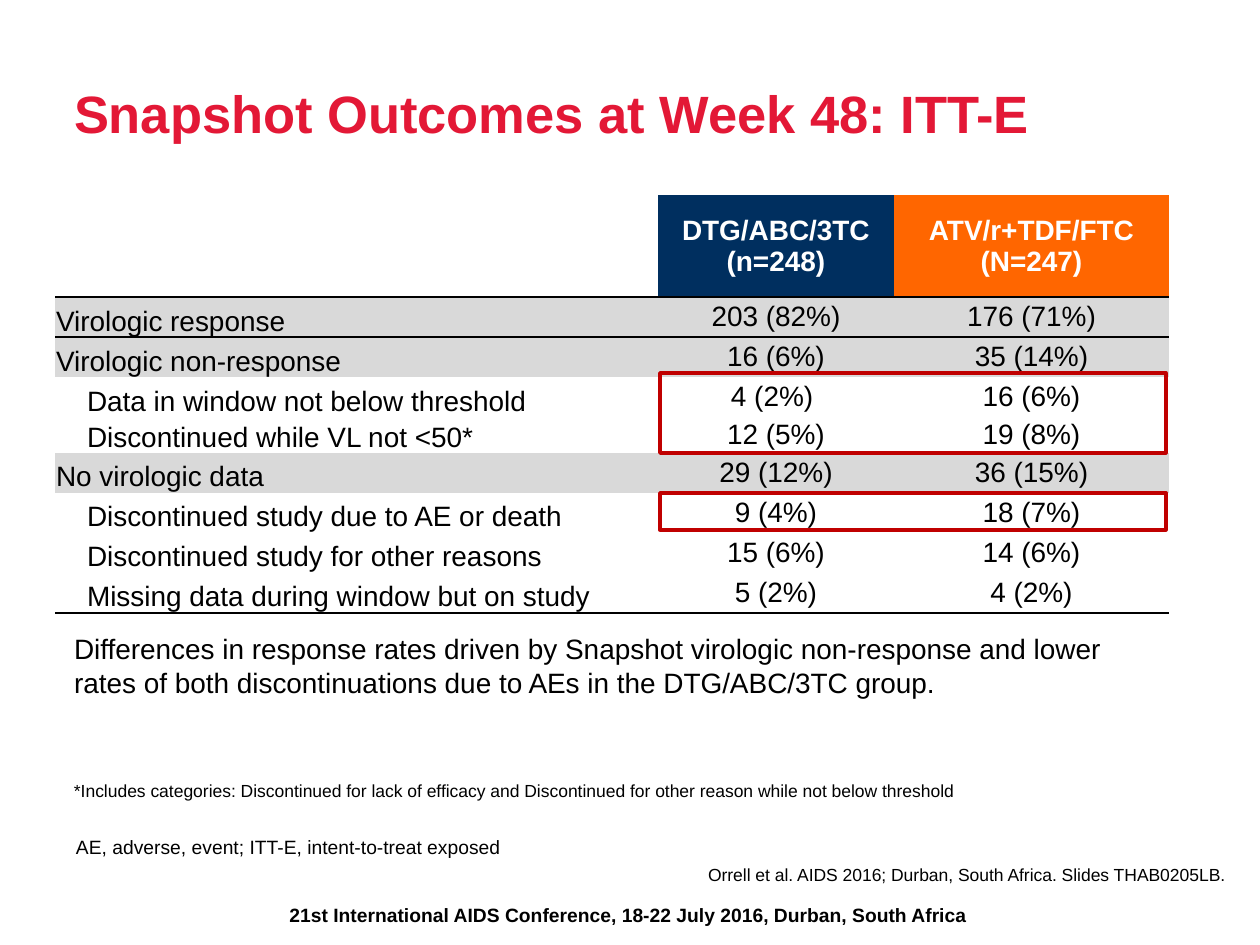
from dataclasses import dataclass

from lxml.etree import SubElement
from pptx import Presentation
from pptx.dml.color import RGBColor
from pptx.enum.shapes import MSO_SHAPE
from pptx.enum.text import MSO_ANCHOR, PP_ALIGN
from pptx.oxml.ns import qn
from pptx.util import Pt

SCALE = 914400 / 126
HUES = {
    "red": "E31836", "navy": "002F5F", "orange": "FF6600", "grey": "D9D9D9",
    "frame": "C00000", "black": "000000", "white": "FFFFFF",
}
FACE = "Arial"


@dataclass
class Box:
    x: int
    y: int
    w: int
    h: int


@dataclass
class Note:
    box: Box
    text: str
    size: int
    hue: str = "black"
    bold: bool = False
    align: PP_ALIGN = PP_ALIGN.LEFT
    anchor: MSO_ANCHOR = MSO_ANCHOR.TOP
    inset: tuple[int, int] = (0, 0)
    after: int = 0
    lead: int = 0


@dataclass
class Row:
    label: str
    left: str
    right: str
    sub: bool = False
    high: int = 40
    rule: bool = False


NOTES = [
    Note(Box(8, 897, 1241, 36),
         "21st International AIDS Conference, 18-22 July 2016, Durban, South Africa",
         11, bold=True, align=PP_ALIGN.CENTER, inset=(13, 6)),
    Note(Box(74, 76, 1155, 68), "Snapshot Outcomes at Week 48: ITT-E", 30,
         hue="red", bold=True, anchor=MSO_ANCHOR.BOTTOM, lead=35),
    Note(Box(74, 632, 1091, 152),
         "Differences in response rates driven by Snapshot virologic non-response "
         "and lower rates of both discontinuations due to AEs in the DTG/ABC/3TC group.",
         16, after=3),
    Note(Box(63, 829, 1152, 25), "AE, adverse, event; ITT-E, intent-to-treat exposed",
         11, inset=(13, 6), after=3),
    Note(Box(73, 864, 1152, 25),
         "Orrell et al. AIDS 2016; Durban, South Africa. Slides THAB0205LB.",
         10, align=PP_ALIGN.RIGHT, after=3),
    Note(Box(74, 780, 893, 63),
         "*Includes categories: Discontinued for lack of efficacy and "
         "Discontinued for other reason while not below threshold", 10),
]
HEADS = [("DTG/ABC/3TC\n(n=248)", "navy"), ("ATV/r+TDF/FTC\n(N=247)", "orange")]
TOP = 102
ROWS = [
    Row("Virologic response", "203 (82%)", "176 (71%)", rule=True),
    Row("Virologic non-response", "16 (6%)", "35 (14%)"),
    Row("Data in window not below threshold", "4 (2%) ", "16 (6%)", sub=True),
    Row("Discontinued while VL not <50*", "12 (5%)", "19 (8%)", sub=True, high=36),
    Row("No virologic data", "29 (12%)", "36 (15%)"),
    Row("Discontinued study due to AE or death", "9 (4%)", "18 (7%)", sub=True),
    Row("Discontinued study for other reasons", "15 (6%)", "14 (6%)", sub=True),
    Row("Missing data during window but on study", "5 (2%)", "4 (2%)",
        sub=True, rule=True),
]
COLS = [603, 236, 275]
GRID = Box(55, 195, sum(COLS), TOP + sum(row.high for row in ROWS))
FRAMES = [Box(660, 493, 506, 37), Box(660, 373, 506, 80)]


def px(n: int) -> int:
    return round(n * SCALE)


def spot(box: Box) -> list[int]:
    return [px(n) for n in (box.x, box.y, box.w, box.h)]


def tint(name: str) -> RGBColor:
    return RGBColor.from_string(HUES[name])


def put_run(para, text: str, size: int, hue: str, bold: bool) -> None:
    run = para.add_run()
    run.text = text
    font = run.font
    font.name, font.size, font.bold = FACE, Pt(size), bold
    font.color.rgb = tint(hue)


def draw_note(slide, note: Note) -> None:
    frame = slide.shapes.add_textbox(*spot(note.box)).text_frame
    frame.word_wrap = True
    frame.vertical_anchor = note.anchor
    frame.margin_left = frame.margin_right = px(note.inset[0])
    frame.margin_top = frame.margin_bottom = px(note.inset[1])
    para = frame.paragraphs[0]
    para.alignment = note.align
    para.space_after = Pt(note.after)
    if note.lead:
        para.line_spacing = Pt(note.lead)
    put_run(para, note.text, note.size, note.hue, note.bold)


def edge(cell, side: str, ruled: bool) -> None:
    line = SubElement(cell._tc.get_or_add_tcPr(), qn("a:ln" + side))
    line.set("w", str(Pt(1) if ruled else 0))
    if ruled:
        fill = SubElement(line, qn("a:solidFill"))
        SubElement(fill, qn("a:srgbClr")).set("val", HUES["black"])
    else:
        SubElement(line, qn("a:noFill"))


def style(cell, fill: str, above: bool, below: bool) -> None:
    for side, ruled in (("L", False), ("R", False), ("T", above), ("B", below)):
        edge(cell, side, ruled)
    if fill:
        cell.fill.solid()
        cell.fill.fore_color.rgb = tint(fill)
    else:
        cell.fill.background()


def fill_cell(cell, text: str, hue: str = "black", bold: bool = False,
              label: bool = False, sub: bool = False) -> None:
    cell.vertical_anchor = MSO_ANCHOR.BOTTOM if label else MSO_ANCHOR.MIDDLE
    cell.margin_left = cell.margin_right = px(1)
    cell.margin_top = px(1 if label or bold else 0)
    cell.margin_bottom = px(1 if bold else 0)
    frame = cell.text_frame
    for i, part in enumerate(text.split("\n")):
        para = frame.add_paragraph() if i else frame.paragraphs[0]
        para.alignment = PP_ALIGN.LEFT if label else PP_ALIGN.CENTER
        if sub:
            para._p.get_or_add_pPr().set("marL", str(px(31)))
        put_run(para, part, 16, hue, bold)


def draw_grid(slide) -> None:
    shape = slide.shapes.add_table(len(ROWS) + 1, len(COLS), *spot(GRID))
    table = shape.table
    table.first_row = table.horz_banding = False
    for col, wide in zip(table.columns, COLS):
        col.width = px(wide)
    table.rows[0].height = px(TOP)
    style(table.cell(0, 0), "", False, True)
    for c, (text, hue) in enumerate(HEADS, 1):
        cell = table.cell(0, c)
        style(cell, hue, False, True)
        fill_cell(cell, text, "white", bold=True)
    above = True
    for r, row in enumerate(ROWS, 1):
        table.rows[r].height = px(row.high)
        for c, text in enumerate((row.label, row.left, row.right)):
            cell = table.cell(r, c)
            style(cell, "" if row.sub else "grey", above, row.rule)
            fill_cell(cell, text, label=c == 0, sub=row.sub and c == 0)
        above = row.rule


def draw_frame(slide, box: Box) -> None:
    shape = slide.shapes.add_shape(MSO_SHAPE.RECTANGLE, *spot(box))
    shape.shadow.inherit = False
    shape.fill.background()
    shape.line.color.rgb = tint("frame")
    shape.line.width = Pt(2)


def main() -> None:
    deck = Presentation()
    deck.slide_width, deck.slide_height = px(1260), px(945)
    slide = deck.slides.add_slide(deck.slide_layouts[6])
    for note in NOTES:
        draw_note(slide, note)
    draw_grid(slide)
    for box in FRAMES:
        draw_frame(slide, box)
    deck.save("out.pptx")


if __name__ == "__main__":
    main()
